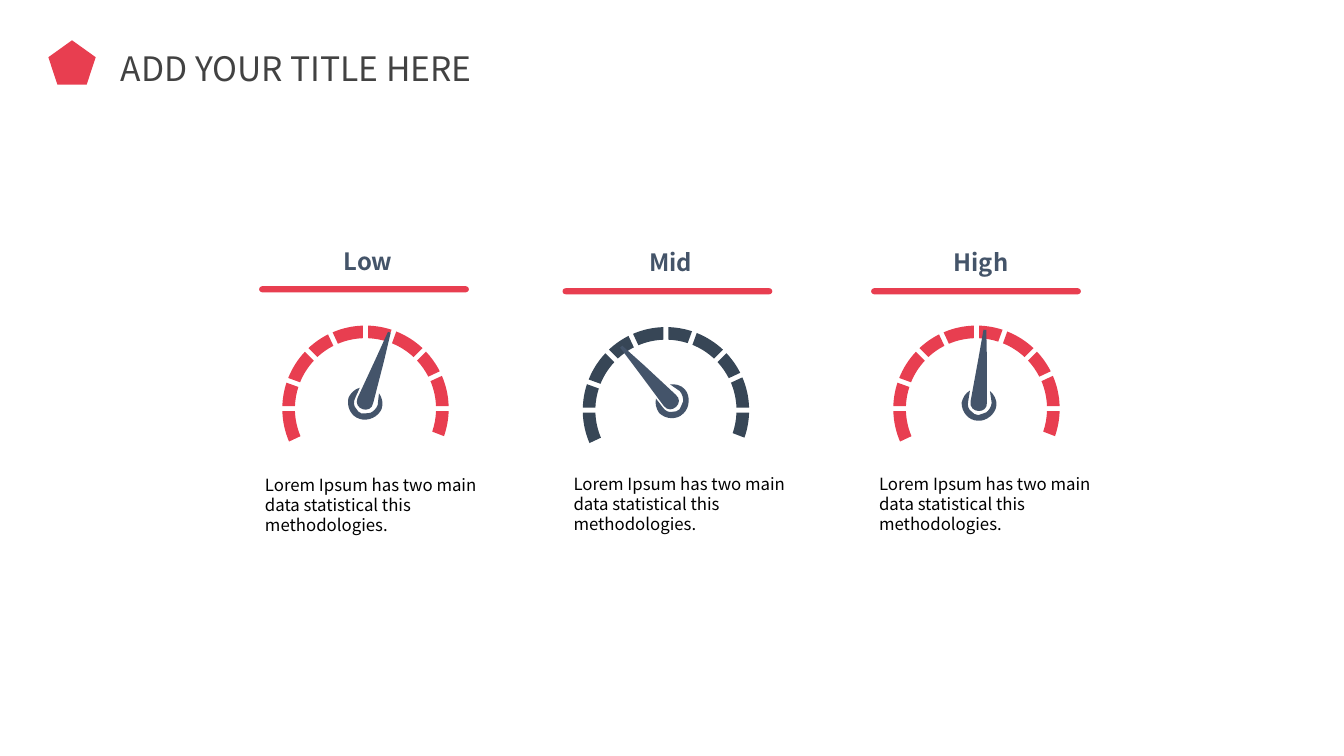
import math
from pptx import Presentation, util as u
from pptx.dml.color import RGBColor
from pptx.enum import shapes, text
from pptx.oxml import ns, xmlchemy

FONT = "Noto Sans CJK JP"
RED, NAVY, SLATE = "E83E50", "374656", "44546A"
BODY = "Lorem Ipsum has two main data statistical this methodologies."
BOUNDS = [-25, 0, 20, 45, 65, 90, 110, 135, 155, 180, 201]
OUTER, INNER, HALF_GAP = 0.825, 0.7, 0.025
HUB = [
    (0.35, 0.14), (0.36, 0.19, 0.35, 0.25, 0.31, 0.29),
    (0.25, 0.35, 0.13, 0.35, 0.07, 0.29), (0, 0.23, 0, 0.12, 0.06, 0.05),
    (0.1, 0.02, 0.15, 0, 0.2, 0.01), (0.12, 0.08),
    (0.08, 0.11, 0.07, 0.15, 0.08, 0.18), (0.08, 0.21, 0.09, 0.23, 0.11, 0.25),
    (0.13, 0.26, 0.16, 0.27, 0.19, 0.28), (0.22, 0.28, 0.26, 0.27, 0.29, 0.24),
]
NEEDLE = [
    (0.66, 0.02), (0.48, 0.25), (0.21, 0.58),
    (0.14, 0.68, 0, 0.55, 0.09, 0.47), (0.42, 0.19), (0.64, 0),
]


def paint(shape, color):
    shape.fill.solid()
    shape.fill.fore_color.rgb = RGBColor.from_string(color)
    shape.line.fill.background()
    shape.shadow.inherit = False


def outline(parent, left, top, steps, color, turn=0):
    points = [
        (u.Inches(left + step[i]), u.Inches(top + step[i + 1]))
        for step in steps for i in range(0, len(step), 2)
    ]
    builder = parent.build_freeform(*points[0], scale=1.0)
    builder.add_line_segments(points[1:], close=True)
    shape = builder.convert_to_shape()
    lines = iter(list(shape.element.iter(ns.qn("a:lnTo"))))
    for step in steps[1:]:
        first = next(lines)
        if len(step) == 6:
            curve = xmlchemy.OxmlElement("a:cubicBezTo")
            first.addprevious(curve)
            for line in (first, next(lines), next(lines)):
                curve.append(line[0])
                line.getparent().remove(line)
    paint(shape, color)
    shape.rotation = turn


deck = Presentation()
deck.slide_width, deck.slide_height = u.Inches(13.33), u.Inches(7.5)
page = deck.slides.add_slide(deck.slide_layouts[5])

badge = page.shapes.add_shape(
    shapes.MSO_SHAPE.REGULAR_PENTAGON, *map(u.Inches, (0.48, 0.4, 0.47, 0.44)))
paint(badge, RED)

title = page.shapes.title
title.left, title.top, title.width, title.height = map(u.Inches, (1.1, 0.4, 4.95, 0.51))
labels = [(title, "ADD YOUR TITLE HERE", 24, "424242", False, 1.27)]

gauges = [
    ("Low", (3.31, 2.38, 0.97), (2.57, 2.84), (2.53, 4.66, 2.6), RED,
     (3.625, 4.055), (3.44, 3.83), (3.38, 3.39), 335.2),
    ("Mid", (6.34, 2.39, 0.97), (5.58, 2.86), (5.59, 4.65, 2.67), NAVY,
     (6.605, 4.07), (6.49, 3.81), (6.14, 3.44), 273.7),
    ("High", (9.36, 2.39, 0.89), (8.64, 2.86), (8.62, 4.65, 2.61), RED,
     (9.685, 4.055), (9.53, 3.84), (9.4, 3.39), 320.7),
]

for name, heading_at, bar_at, body_at, color, center, hub_at, needle_at, turn in gauges:
    body = page.shapes.add_textbox(*map(u.Inches, (*body_at, 0.71)))
    heading = page.shapes.add_textbox(*map(u.Inches, (*heading_at, 0.39)))
    labels.append((body, BODY, 12, "000000", False, 1.19))
    labels.append((heading, name, 17, "445469", True, 1.27))

    bar = page.shapes.add_shape(
        shapes.MSO_SHAPE.ROUNDED_RECTANGLE, *map(u.Inches, (*bar_at, 2.08, 0.06)))
    bar.adjustments[0] = 0.5
    paint(bar, RED)

    dial = page.shapes.add_group_shape()
    for low, high in zip(BOUNDS, BOUNDS[1:]):
        steps = []
        for radius, begin, end, sign in ((OUTER, low, high, 1), (INNER, high, low, -1)):
            inset = sign * HALF_GAP / radius
            a, b = math.radians(begin) + inset, math.radians(end) - inset
            pull = radius * 4 / 3 * math.tan((b - a) / 4)
            x1, y1 = -radius * math.cos(a), -radius * math.sin(a)
            x2, y2 = -radius * math.cos(b), -radius * math.sin(b)
            steps.append((x1, y1))
            steps.append((x1 + pull * math.sin(a), y1 - pull * math.cos(a),
                          x2 - pull * math.sin(b), y2 + pull * math.cos(b), x2, y2))
        outline(dial.shapes, *center, steps, color)

    pointer = page.shapes.add_group_shape()
    outline(pointer.shapes, *hub_at, HUB, SLATE, turn)
    outline(pointer.shapes, *needle_at, NEEDLE, SLATE, turn)

for box, words, size, color, bold, spacing in labels:
    frame = box.text_frame
    frame.word_wrap = True
    frame.auto_size = text.MSO_AUTO_SIZE.NONE
    frame.vertical_anchor = text.MSO_ANCHOR.TOP
    para = frame.paragraphs[0]
    para.alignment = text.PP_ALIGN.LEFT
    para.line_spacing = u.Pt(size * spacing)
    span = para.add_run()
    span.text = words
    span.font.name = FONT
    span.font.size = u.Pt(size)
    span.font.bold = bold
    span.font.color.rgb = RGBColor.from_string(color)

deck.save("out.pptx")
